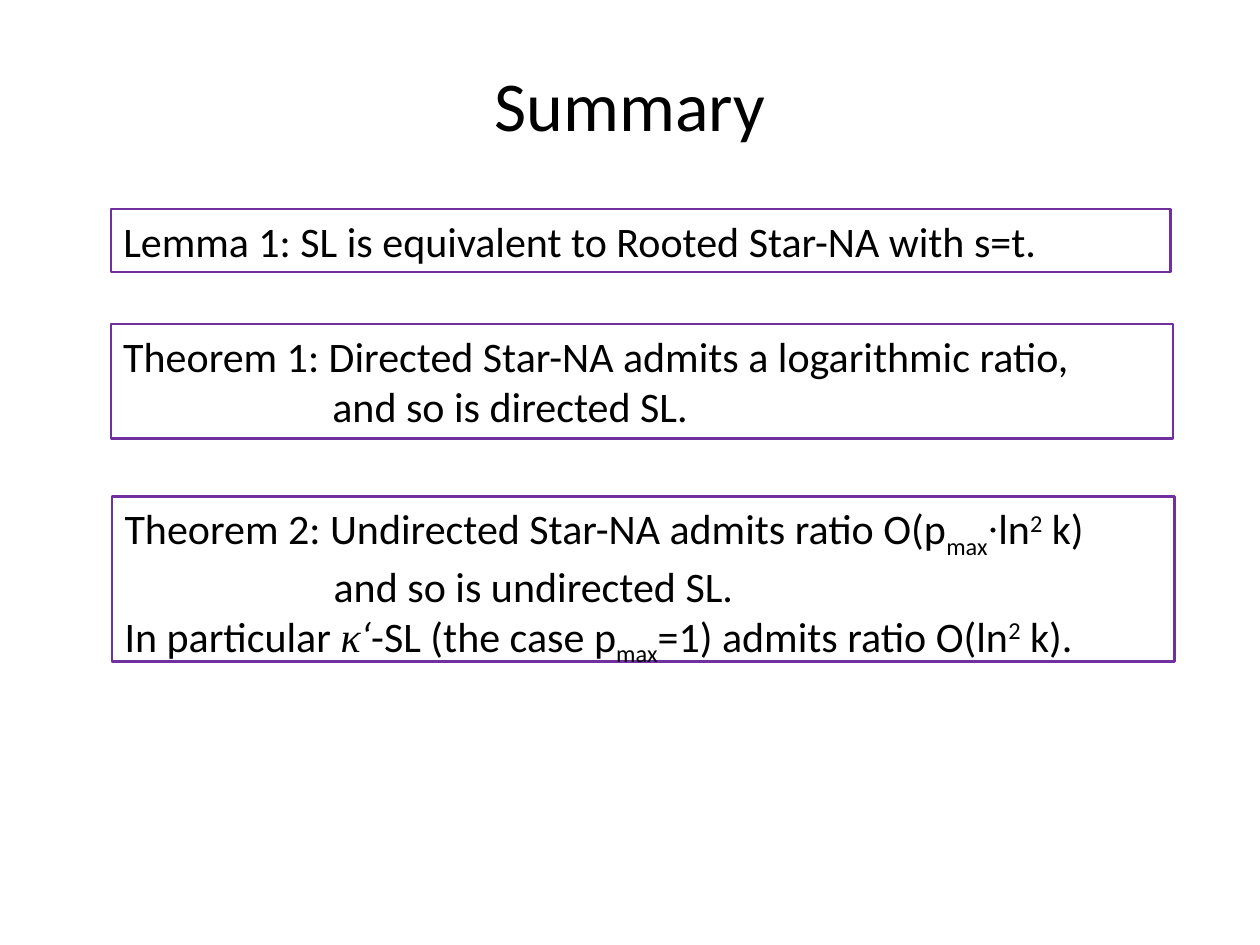
import pptx
import pptx.util
import pptx.dml.color
import pptx.enum.text
from pptx.util import Inches

INK = "000000"
EDGE = "7030A0"
SUB, SUP = -25000, 30000


def color(code):
    return pptx.dml.color.RGBColor.from_string(code)


def add_run(para, text, size=24, base=0, font="Calibri", slant=False):
    run = para.add_run()
    run.text = text
    run.font.size = pptx.util.Pt(size)
    run.font.name = font
    run.font.color.rgb = color(INK)
    if slant:
        run.font.italic = True
    if base:
        run.font._element.set("baseline", str(base))


deck = pptx.Presentation()
deck.slide_width = Inches(10)
deck.slide_height = Inches(7.5)
slide = deck.slides.add_slide(deck.slide_layouts[6])

# Title
title = slide.shapes.add_textbox(Inches(0.5), Inches(0.3), Inches(9), Inches(1.04))
frame = title.text_frame
frame.word_wrap = True
frame.vertical_anchor = pptx.enum.text.MSO_ANCHOR.MIDDLE
para = frame.paragraphs[0]
para.alignment = pptx.enum.text.PP_ALIGN.CENTER
add_run(para, "Summary", size=40)

# Claims: place, then lines of (indent, runs)
serif = {"font": "Times New Roman"}
claims = [
    ((0.88, 1.66, 8.41, 0.5), [
        (0, [("Lemma 1: SL is equivalent to Rooted Star-NA with s=t.", {})]),
    ]),
    ((0.88, 2.57, 8.43, 0.91), [
        (0, [("Theorem 1: Directed Star-NA admits a logarithmic ratio,", {})]),
        (1.66, [("and so is directed SL.", {})]),
    ]),
    ((0.89, 3.94, 8.43, 1.31), [
        (0, [("Theorem 2: Undirected Star-NA admits ratio O(p", {}),
             ("max", {"base": SUB}), ("∙", serif), ("ln", {}),
             ("2", {"base": SUP}), (" k)", {})]),
        (1.66, [("and so is undirected SL.", {})]),
        (0, [("In particular ", {}), ("κ", {"slant": True, **serif}),
             ("‘", {"slant": True}), ("-SL (the case p", {}),
             ("max", {"base": SUB}), ("=1) admits ratio O(ln", {}),
             ("2", {"base": SUP}), (" k).", {})]),
    ]),
]

# Framed boxes
for place, lines in claims:
    box = slide.shapes.add_textbox(*[Inches(n) for n in place])
    box.line.color.rgb = color(EDGE)
    box.line.width = pptx.util.Pt(1.5)
    frame = box.text_frame
    frame.word_wrap = True
    for i, (indent, runs) in enumerate(lines):
        para = frame.add_paragraph() if i else frame.paragraphs[0]
        if indent:
            para._p.get_or_add_pPr().set("marL", str(Inches(indent)))
        for text, style in runs:
            add_run(para, text, **style)

deck.save("out.pptx")
